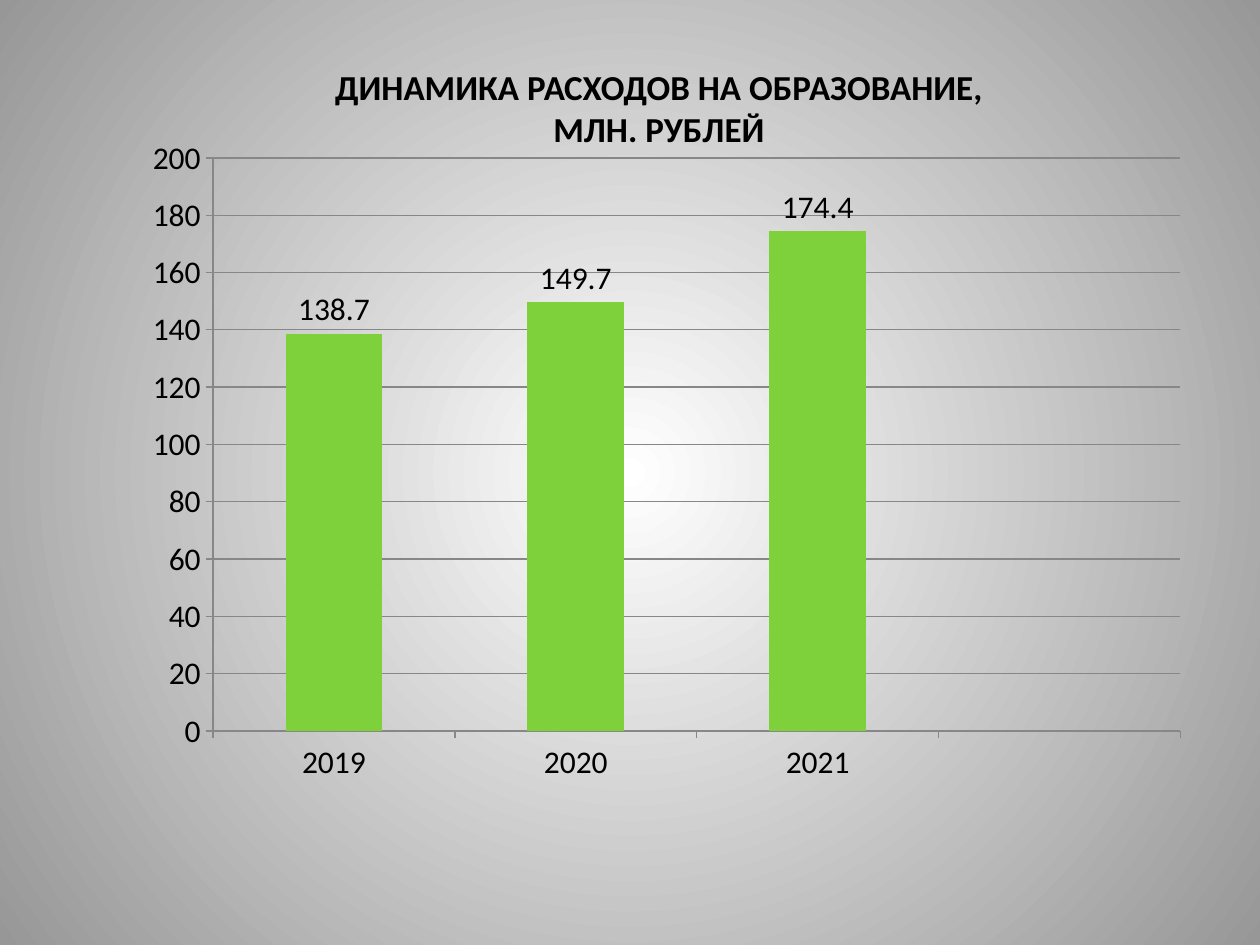
from dataclasses import dataclass

from lxml.etree import SubElement
from pptx import Presentation
from pptx.chart.data import CategoryChartData
from pptx.dml.color import RGBColor as RGB
from pptx.enum.chart import XL_CHART_TYPE as ChartType
from pptx.enum.chart import XL_LABEL_POSITION as LabelPos
from pptx.enum.chart import XL_TICK_MARK as Tick
from pptx.enum.text import MSO_ANCHOR as Anchor
from pptx.enum.text import MSO_AUTO_SIZE as AutoSize
from pptx.enum.text import PP_ALIGN as Align
from pptx.oxml.ns import qn
from pptx.util import Inches, Pt


@dataclass(frozen=True)
class Theme:
    font: str = "Calibri"
    title_size: Pt = Pt(20)
    chart_size: Pt = Pt(18)
    text: RGB = RGB(0, 0, 0)
    bar: RGB = RGB(0x7F, 0xD1, 0x3B)
    line: RGB = RGB(0x87, 0x87, 0x87)
    bg_center: RGB = RGB(255, 255, 255)
    bg_edge: RGB = RGB(0x97, 0x97, 0x97)


THEME = Theme()
TITLE = ["ДИНАМИКА РАСХОДОВ НА ОБРАЗОВАНИЕ,", "МЛН. РУБЛЕЙ"]
SPENDING = {"2019": 138.7, "2020": 149.7, "2021": 174.4, "": None}


def set_all(obj, values):
    for name, value in values.items():
        setattr(obj, name, value)


def style_font(font, size, bold):
    set_all(font, {"name": THEME.font, "size": size, "bold": bold})
    font.color.rgb = THEME.text


def paint_background(slide):
    fill = slide.background.fill
    fill.gradient()
    for stop, color in zip(fill.gradient_stops, (THEME.bg_center, THEME.bg_edge)):
        stop.color.rgb = color
    # Radial gradient from the middle of the slide
    grad = slide.element.find(".//" + qn("a:gradFill"))
    grad.remove(grad.find(qn("a:lin")))
    path = SubElement(grad, qn("a:path"), path="circle")
    SubElement(path, qn("a:fillToRect"), {side: "50000" for side in "ltrb"})


def add_title(slide, left, top, width, height):
    sp = slide.shapes.title
    set_all(sp, {"left": left, "top": top, "width": width, "height": height})
    tf = sp.text_frame
    tf.text = "\n".join(TITLE)
    set_all(tf, {"word_wrap": True, "vertical_anchor": Anchor.TOP,
                 "auto_size": AutoSize.SHAPE_TO_FIT_TEXT})
    for p in tf.paragraphs:
        p.alignment = Align.CENTER
        style_font(p.runs[0].font, THEME.title_size, True)


def set_plot_layout(chart, x, y, w, h):
    plot_area = chart.element.find(".//" + qn("c:plotArea"))
    layout = plot_area.find(qn("c:layout"))
    if layout is None:
        layout = SubElement(plot_area, qn("c:layout"))
        plot_area.insert(0, layout)
    manual = SubElement(layout, qn("c:manualLayout"))
    values = {"layoutTarget": "inner", "xMode": "edge", "yMode": "edge",
              "x": x, "y": y, "w": w, "h": h}
    for tag, value in values.items():
        SubElement(manual, qn(f"c:{tag}"), val=str(value))


def add_spending_chart(slide, left, top, width, height):
    data = CategoryChartData()
    data.categories = list(SPENDING)
    data.add_series("Series 1", list(SPENDING.values()))
    chart = slide.shapes.add_chart(
        ChartType.COLUMN_CLUSTERED, left, top, width, height, data).chart
    set_all(chart, {"has_legend": False, "has_title": False})
    style_font(chart.font, THEME.chart_size, False)
    set_plot_layout(chart, 0.136, 0.029, 0.855, 0.808)

    # Columns and value labels
    plot = chart.plots[0]
    set_all(plot, {"gap_width": 150, "vary_by_categories": False})
    series = plot.series[0]
    series.format.fill.solid()
    series.format.fill.fore_color.rgb = THEME.bar
    set_all(series.data_labels, {"show_value": True,
                                 "position": LabelPos.OUTSIDE_END})

    # Axes and gridlines
    value_axis = chart.value_axis
    set_all(value_axis, {"minimum_scale": 0, "maximum_scale": 200,
                         "major_unit": 20, "has_major_gridlines": True})
    for axis in (chart.category_axis, value_axis):
        set_all(axis, {"major_tick_mark": Tick.OUTSIDE,
                       "minor_tick_mark": Tick.NONE})
    for part in (chart.category_axis, value_axis, value_axis.major_gridlines):
        part.format.line.color.rgb = THEME.line
        part.format.line.width = Pt(0.75)


def main():
    prs = Presentation()
    set_all(prs, {"slide_width": Inches(10), "slide_height": Inches(7.5)})
    slide = prs.slides.add_slide(prs.slide_layouts.get_by_name("Title Only"))
    paint_background(slide)
    add_spending_chart(slide, Inches(0.47), Inches(1.09), Inches(8.98), Inches(5.63))
    add_title(slide, Inches(1.56), Inches(0.47), Inches(7.34), Inches(0.77))
    prs.save("out.pptx")


if __name__ == "__main__":
    main()
